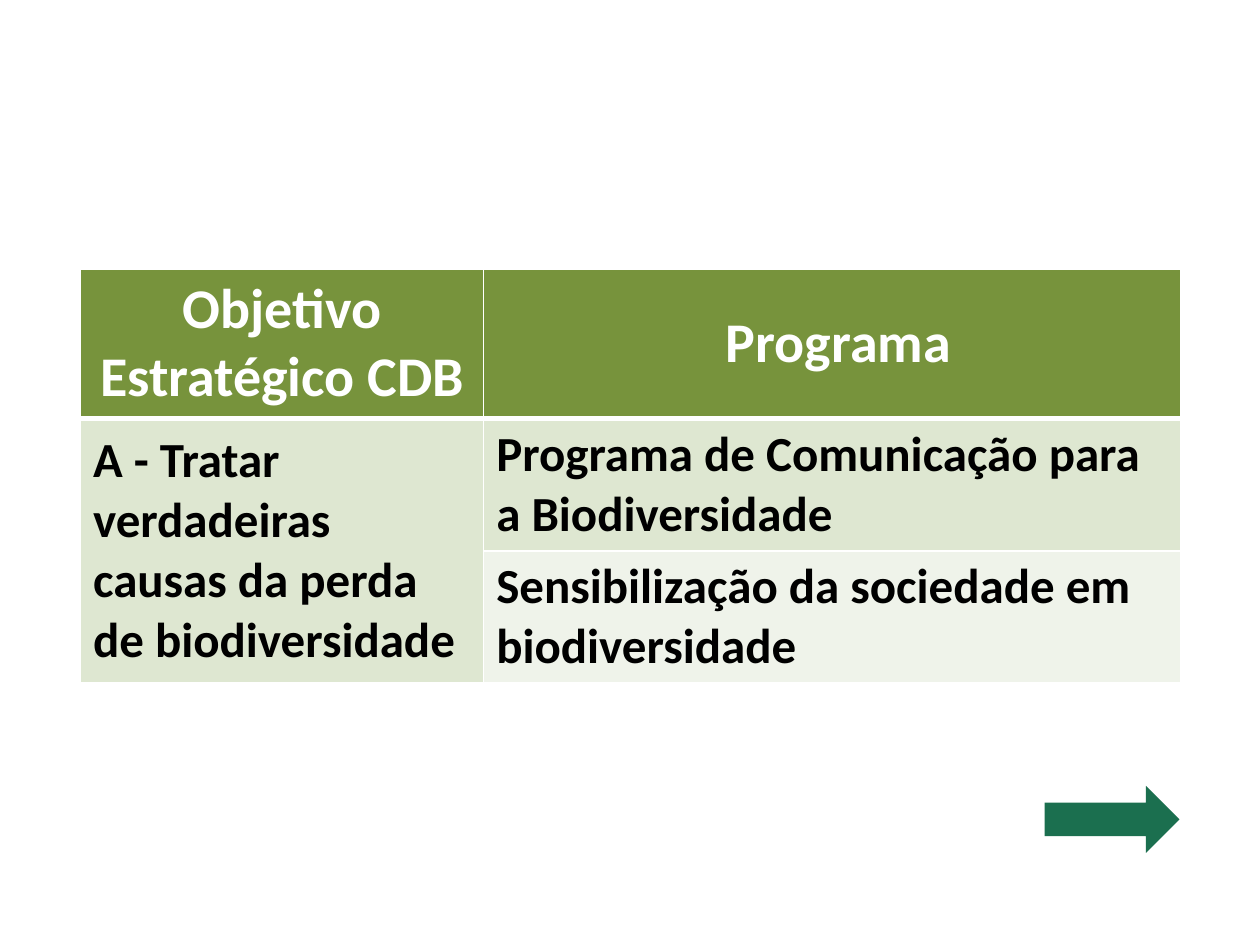
import pptx
import pptx.dml.color
import pptx.enum.shapes
import pptx.enum.text
import pptx.oxml
import pptx.oxml.ns
import pptx.util

Pt = pptx.util.Pt
RGB = pptx.dml.color.RGBColor.from_string
ALIGN = pptx.enum.text.PP_ALIGN
COLORS = {
    "header": "77933C",
    "band": "DEE7D1",
    "light": "EFF3EA",
    "white": "FFFFFF",
    "black": "000000",
    "arrow": "1B6F4F",
}
FORMATS = {
    "header": {"size": Pt(32), "bold": True, "name": "Calibri"},
    "body": {"size": Pt(28), "bold": True, "name": "Calibri"},
}


def add_border(cell, side, width):
    border = pptx.oxml.parse_xml(
        f'<a:{side} {pptx.oxml.ns.nsdecls("a")} w="{Pt(width)}"><a:solidFill>'
        f'<a:srgbClr val="{COLORS["white"]}"/></a:solidFill></a:{side}>'
    )
    cell._tc.get_or_add_tcPr().append(border)


presentation = pptx.Presentation()
presentation.slide_width = Pt(720)
presentation.slide_height = Pt(540)
slide = presentation.slides.add_slide(presentation.slide_layouts[6])

programs = slide.shapes.add_table(3, 2, Pt(46), Pt(153.6), Pt(628.6), Pt(235)).table
for column, width in zip(programs.columns, (230.4, 398.2)):
    column.width = Pt(width)
for row, height in zip(programs.rows, (85, 75, 75)):
    row.height = Pt(height)
programs.cell(1, 0).merge(programs.cell(2, 0))

entries = [
    (0, 0, "Objetivo Estratégico CDB", "header"),
    (0, 1, " Programa", "header"),
    (1, 0, "A - Tratar verdadeiras causas da perda de biodiversidade", "band"),
    (1, 1, "Programa de Comunicação para a Biodiversidade", "band"),
    (2, 0, "", "band"),
    (2, 1, "Sensibilização da sociedade em biodiversidade", "light"),
]
for row, column, wording, fill in entries:
    cell = programs.cell(row, column)
    is_header = row == 0
    for side in ("lnL", "lnR", "lnT", "lnB"):
        beside_header = (row, side) in ((0, "lnB"), (1, "lnT"))
        add_border(cell, side, 3 if beside_header else 1)
    cell.fill.solid()
    cell.fill.fore_color.rgb = RGB(COLORS[fill])
    cell.vertical_anchor = pptx.enum.text.MSO_ANCHOR.MIDDLE
    if not wording:
        continue
    paragraph = cell.text_frame.paragraphs[0]
    paragraph.alignment = ALIGN.CENTER if is_header else ALIGN.LEFT
    run = paragraph.add_run()
    run.text = wording
    for attribute, value in FORMATS["header" if is_header else "body"].items():
        setattr(run.font, attribute, value)
    run.font.color.rgb = RGB(COLORS["white" if is_header else "black"])

next_arrow = slide.shapes.add_shape(
    pptx.enum.shapes.MSO_SHAPE.RIGHT_ARROW, Pt(597), Pt(449), Pt(77), Pt(38.4)
)
next_arrow.shadow.inherit = False
next_arrow.fill.solid()
next_arrow.fill.fore_color.rgb = RGB(COLORS["arrow"])
next_arrow.line.fill.background()

presentation.save("out.pptx")
